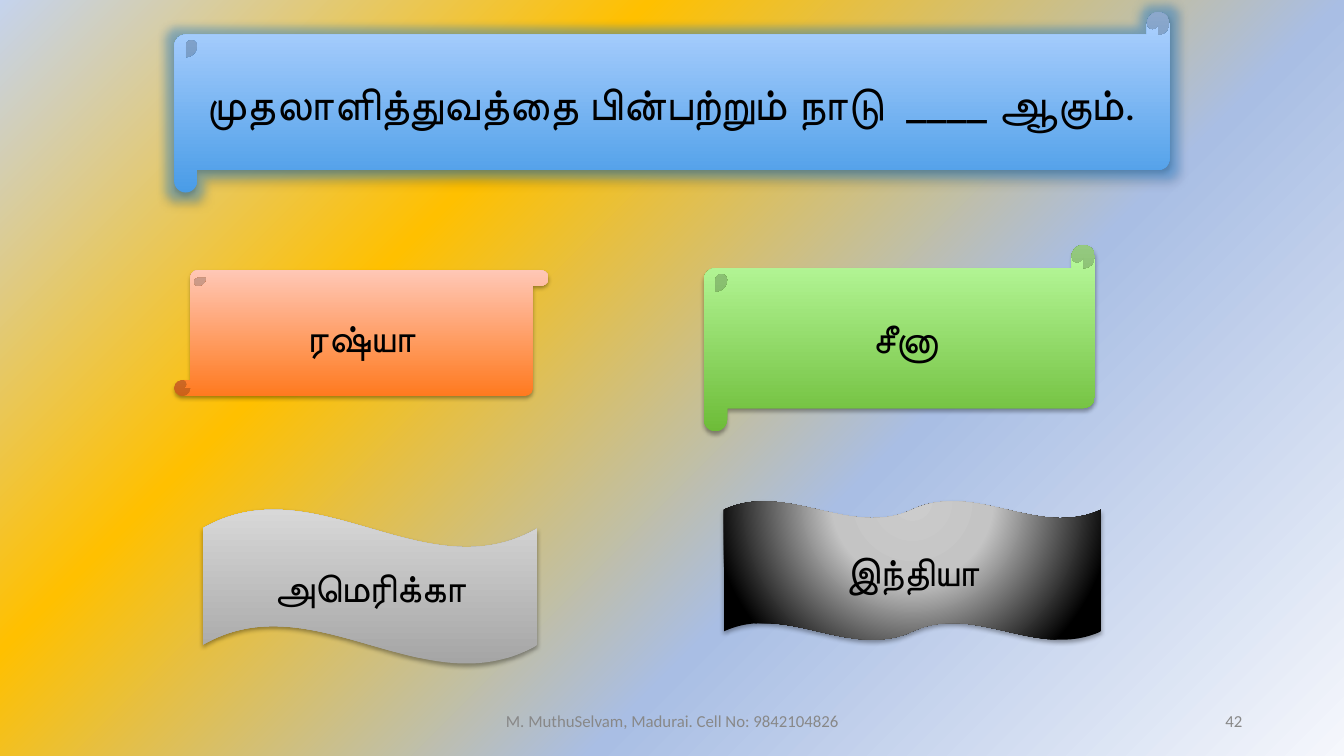
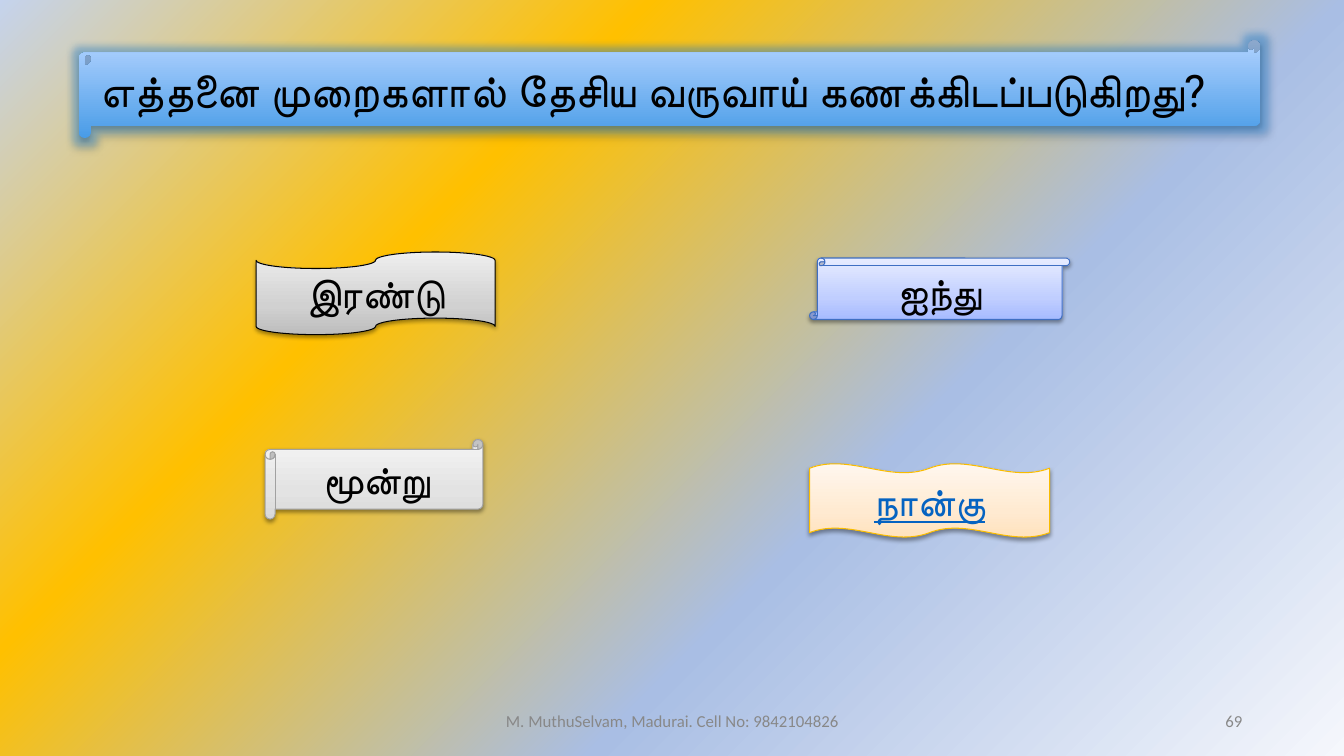
from pptx import Presentation
from pptx.dml.color import RGBColor
from pptx.enum.shapes import MSO_SHAPE
from pptx.enum.text import MSO_ANCHOR, PP_ALIGN
from pptx.oxml import parse_xml
from pptx.oxml.ns import nsdecls, qn
from pptx.util import Pt

PX = 9144
BLACK = RGBColor(0x00, 0x00, 0x00)
FOOTER_GREY = RGBColor(0x88, 0x88, 0x88)
LINK_BLUE = RGBColor(0x05, 0x63, 0xC1)
GLOW_BLUE = RGBColor(0x2F, 0x8F, 0xE0)
EDGE_BLUE = RGBColor(0x3F, 0x6F, 0xC3)
EDGE_GREY = RGBColor(0xA1, 0xA1, 0xA1)
EDGE_GOLD = RGBColor(0xF9, 0xBC, 0x00)


def stops(*pairs):
    return [(pos, RGBColor.from_string(value)) for pos, value in pairs]


BACKDROP = stops((0, "F5F7FC"), (36, "A9BEE4"), (69, "FFC000"), (100, "C5D3ED"))
SKY = stops((0, "499CE7"), (100, "B0D2FF"))
ORANGE = stops((0, "FF7A1F"), (100, "FFC7B6"))
GREEN = stops((0, "6DBC38"), (100, "BBFCA0"))
GREY = stops((0, "A5A5A5"), (100, "D8D8D8"))
SPOTLIGHT = stops((0, "CCCCCC"), (40, "C4C4C4"), (100, "000000"))
SILVER = stops((0, "BDBDBD"), (35, "D1D1D1"), (100, "EEEEEE"))
LAVENDER = stops((0, "A6BBFF"), (35, "C0CEFF"), (100, "E7ECFF"))
PALE_GREY = stops((0, "D8D8D8"), (35, "E3E3E3"), (100, "F4F4F4"))
CREAM = stops((0, "FFE2BD"), (35, "FFEAD1"), (100, "FFF7EE"))

CORNER = (100, 100, 0, 0)
ABOVE = (50, -80, 50, 180)
FOOTER = "M. MuthuSelvam, Madurai. Cell No: 9842104826"


def set_gradient(fill, props, colors, focus=None):
    fill.solid()
    marks = "".join(
        f'<a:gs pos="{pos * 1000}"><a:srgbClr val="{color}"/></a:gs>'
        for pos, color in colors
    )
    if focus:
        sides = " ".join(f'{k}="{v * 1000}"' for k, v in zip("ltrb", focus))
        shade = f'<a:path path="circle"><a:fillToRect {sides}/></a:path>'
    else:
        shade = '<a:lin ang="16200000" scaled="0"/>'
    grad = parse_xml(
        f'<a:gradFill {nsdecls("a")} rotWithShape="1">'
        f"<a:gsLst>{marks}</a:gsLst>{shade}</a:gradFill>"
    )
    props.replace(props.find(qn("a:solidFill")), grad)


def set_effects(sp, alpha, dist, glow):
    sp.shadow.inherit = False
    halo = (
        f'<a:glow rad="{Pt(11)}"><a:srgbClr val="{GLOW_BLUE}">'
        '<a:alpha val="40000"/></a:srgbClr></a:glow>'
        if glow else ""
    )
    effects = parse_xml(
        f'<a:effectLst {nsdecls("a")}>{halo}'
        f'<a:outerShdw blurRad="{Pt(3.1)}" dist="{Pt(dist)}" dir="5400000" '
        f'rotWithShape="0"><a:srgbClr val="{BLACK}">'
        f'<a:alpha val="{alpha * 1000}"/></a:srgbClr></a:outerShdw></a:effectLst>'
    )
    props = sp.element.spPr
    props.replace(props.find(qn("a:effectLst")), effects)


def set_text(sp, text, size, font, color, align, underline=None):
    tf = sp.text_frame
    tf.word_wrap = True
    tf.vertical_anchor = MSO_ANCHOR.MIDDLE
    p = tf.paragraphs[0]
    p.alignment = align
    r = p.add_run()
    r.text = text
    r.font.size = Pt(size)
    r.font.name = font
    r.font.color.rgb = color
    r.font.underline = underline


def add_banner(s, kind, box, colors, focus=None, edge=None, glow=False):
    sp = s.shapes.add_shape(kind, *(v * PX for v in box))
    set_gradient(sp.fill, sp.element.spPr, colors, focus)
    if edge is None:
        sp.line.fill.background()
        set_effects(sp, 35, 1.8, glow)
    else:
        sp.line.color.rgb = edge
        sp.line.width = Pt(0.75)
        set_effects(sp, 38, 1.6, glow)
    return sp


def add_question(s, text, box):
    sp = add_banner(s, MSO_SHAPE.HORIZONTAL_SCROLL, box, SKY, glow=True)
    set_text(sp, text, 32, "Roboto", BLACK, PP_ALIGN.LEFT)


def add_answer(s, text, kind, box, colors, focus=None, edge=None, linked=False):
    sp = add_banner(s, kind, box, colors, focus, edge)
    color = LINK_BLUE if linked else BLACK
    set_text(sp, text, 28, "Roboto", color, PP_ALIGN.CENTER, linked or None)


def add_footer(s, number):
    for text, left, width, align in (
        (FOOTER, 442, 450, PP_ALIGN.CENTER),
        (str(number), 942, 300, PP_ALIGN.RIGHT),
    ):
        sp = s.shapes.add_textbox(left * PX, 695 * PX, width * PX, 40 * PX)
        set_text(sp, text, 12, "Calibri", FOOTER_GREY, align)


def add_quiz_slide(prs, number, question, box, answers):
    s = prs.slides.add_slide(prs.slide_layouts[6])
    add_question(s, question, box)
    add_footer(s, number)
    for answer in answers:
        add_answer(s, *answer)


def main():
    prs = Presentation()
    prs.slide_width, prs.slide_height = 1333 * PX, 750 * PX
    master = prs.slide_master
    fill = master.background.fill
    set_gradient(fill, master.element.find(".//" + qn("p:bgPr")), BACKDROP, CORNER)

    add_quiz_slide(
        prs, 42, "முதலாளித்துவத்தை பின்பற்றும் நாடு  ____ ஆகும்.",
        (173, 12, 987, 179),
        [
            ("ரஷ்யா", MSO_SHAPE.VERTICAL_SCROLL, (173, 268, 371, 125), ORANGE),
            ("சீனா", MSO_SHAPE.HORIZONTAL_SCROLL, (698, 243, 388, 185), GREEN),
            ("அமெரிக்கா", MSO_SHAPE.WAVE, (201, 505, 332, 154), GREY),
            ("இந்தியா", MSO_SHAPE.DOUBLE_WAVE, (718, 497, 374, 138), SPOTLIGHT, ABOVE),
        ],
    )
    add_quiz_slide(
        prs, 69, "எத்தனை முறைகளால் தேசிய வருவாய் கணக்கிடப்படுகிறது?",
        (78, 40, 1172, 97),
        [
            ("இரண்டு", MSO_SHAPE.FLOWCHART_PUNCHED_TAPE, (254, 250, 237, 82),
             SILVER, None, BLACK),
            ("ஐந்து", MSO_SHAPE.VERTICAL_SCROLL, (803, 256, 258, 61),
             LAVENDER, None, EDGE_BLUE),
            ("மூன்று", MSO_SHAPE.HORIZONTAL_SCROLL, (263, 436, 216, 79),
             PALE_GREY, None, EDGE_GREY),
            ("நான்கு", MSO_SHAPE.DOUBLE_WAVE, (803, 460, 238, 73),
             CREAM, None, EDGE_GOLD, True),
        ],
    )
    prs.save("out.pptx")


if __name__ == "__main__":
    main()
